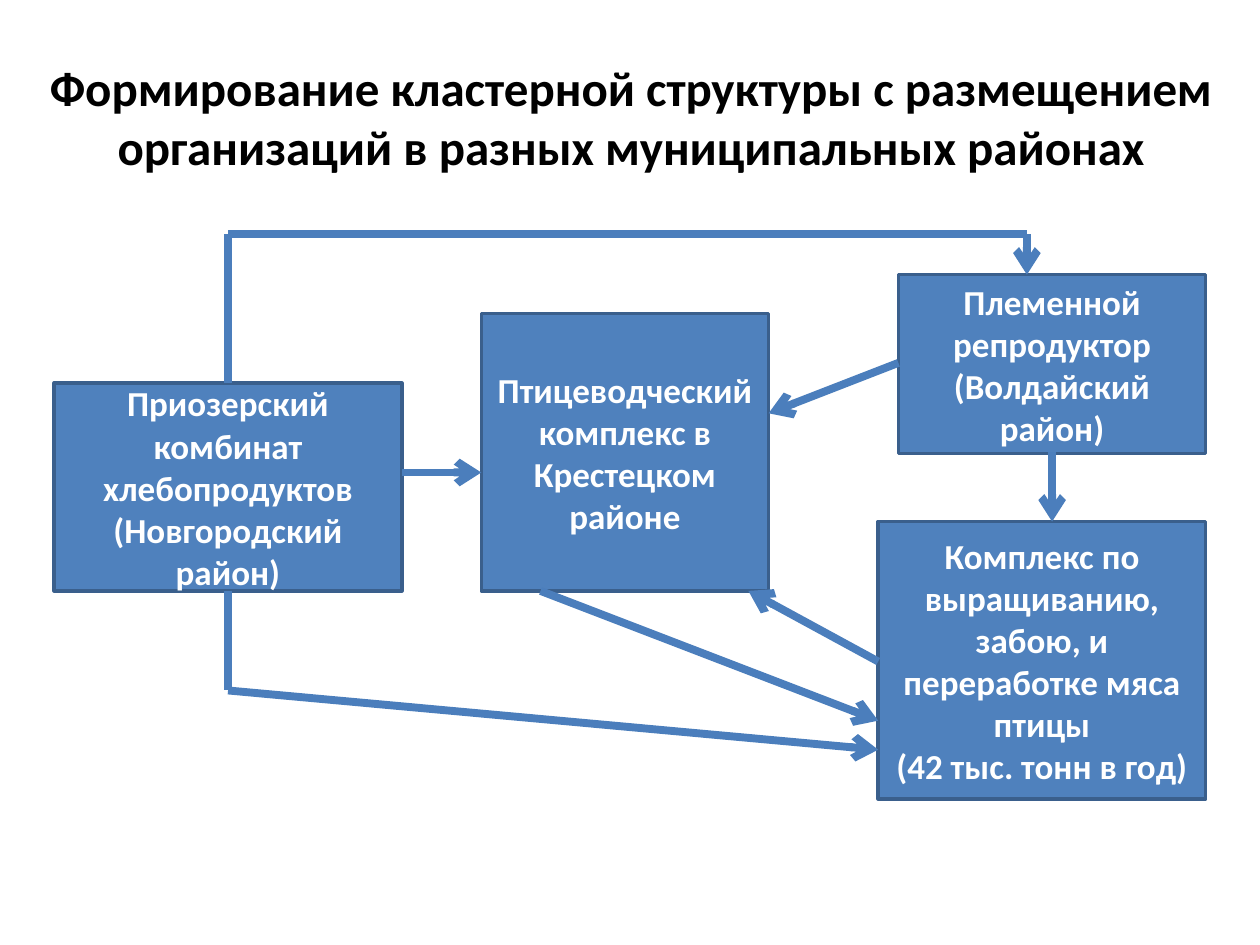
import pptx
import pptx.util
import pptx.dml.color
import pptx.enum.shapes
import pptx.enum.text
import pptx.oxml.ns
import lxml.etree

Inches = pptx.util.Inches
Pt = pptx.util.Pt
RGBColor = pptx.dml.color.RGBColor

BLACK = RGBColor(0x00, 0x00, 0x00)
WHITE = RGBColor(0xFF, 0xFF, 0xFF)
BOX_FILL = RGBColor(0x4F, 0x81, 0xBD)
BOX_LINE = RGBColor(0x3A, 0x5F, 0x8C)
ARROW = RGBColor(0x4B, 0x7E, 0xBC)
FONT = "Calibri"

TITLE = "Формирование кластерной структуры с размещением организаций в разных муниципальных районах"
BOXES = [
    ((3.82, 2.49, 2.28, 2.2), ["Птицеводческий комплекс в Крестецком районе"]),
    ((7.13, 2.18, 2.44, 1.42), ["Племенной репродуктор", "(Волдайский район)"]),
    ((6.97, 4.14, 2.6, 2.2),
     ["Комплекс по выращиванию, забою, и переработке мяса птицы", "(42 тыс. тонн в год)"]),
    ((0.43, 3.04, 2.76, 1.65),
     ["Приозерский комбинат хлебопродуктов", "(Новгородский район)"]),
]
ROUTES = [
    [(7.13, 2.88), (6.1, 3.28)],
    [(8.35, 3.59), (8.35, 4.14)],
    [(4.29, 4.69), (6.97, 5.72)],
    [(6.97, 5.25), (5.94, 4.69)],
    [(3.19, 3.75), (3.82, 3.75)],
    [(1.81, 3.04), (1.81, 1.86), (8.15, 1.86), (8.15, 2.18)],
    [(1.81, 4.69), (1.81, 5.48), (6.97, 5.95)],
]


def write_text(shape, lines, size, color):
    frame = shape.text_frame
    frame.word_wrap = True
    frame.auto_size = pptx.enum.text.MSO_AUTO_SIZE.NONE
    frame.vertical_anchor = pptx.enum.text.MSO_ANCHOR.MIDDLE
    frame.text = "\n".join(lines)
    for para in frame.paragraphs:
        para.alignment = pptx.enum.text.PP_ALIGN.CENTER
        para.font.name = FONT
        para.font.size = Pt(size)
        para.font.bold = True
        para.font.color.rgb = color


def add_box(page, place, lines):
    box = page.shapes.add_shape(
        pptx.enum.shapes.MSO_SHAPE.RECTANGLE, *map(Inches, place))
    box.shadow.inherit = False
    box.fill.solid()
    box.fill.fore_color.rgb = BOX_FILL
    box.line.color.rgb = BOX_LINE
    box.line.width = Pt(2)
    write_text(box, lines, 20, WHITE)


def add_segment(page, start, end, has_arrow):
    segment = page.shapes.add_connector(
        pptx.enum.shapes.MSO_CONNECTOR.STRAIGHT, *map(Inches, start + end))
    segment.line.color.rgb = ARROW
    segment.line.width = Pt(4.5)
    if has_arrow:
        line = segment.line._get_or_add_ln()
        lxml.etree.SubElement(line, pptx.oxml.ns.qn("a:tailEnd"), type="arrow")
    properties = segment._element.spPr
    lxml.etree.SubElement(properties, pptx.oxml.ns.qn("a:effectLst"))


def main():
    deck = pptx.Presentation()
    deck.slide_width, deck.slide_height = Inches(10), Inches(7.5)
    page = deck.slides.add_slide(deck.slide_layouts.get_by_name("Title Only"))
    title = page.shapes.title
    title.left, title.top, title.width, title.height = map(Inches, (0.28, 0.3, 9.45, 1.25))
    write_text(title, [TITLE], 28, BLACK)
    for place, lines in BOXES:
        add_box(page, place, lines)
    for route in ROUTES:
        for start, end in zip(route, route[1:]):
            add_segment(page, start, end, end == route[-1])
    deck.save("out.pptx")


if __name__ == "__main__":
    main()
